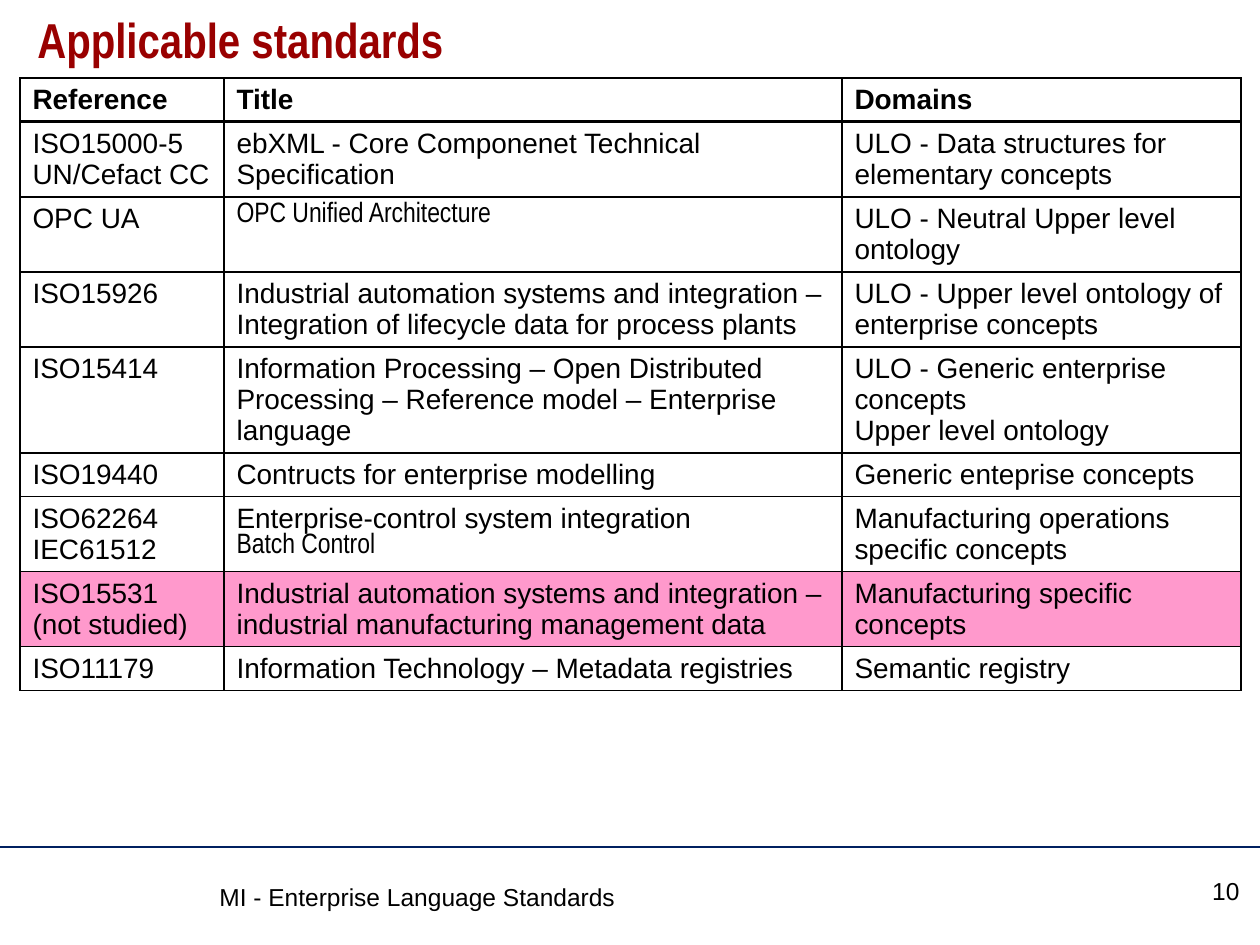
from lxml import etree
from pptx import Presentation
from pptx.dml.color import RGBColor
from pptx.enum.shapes import MSO_CONNECTOR
from pptx.enum.text import PP_ALIGN
from pptx.oxml.ns import qn
from pptx.util import Pt

STRAIGHT = MSO_CONNECTOR.STRAIGHT
LEFT, RIGHT = PP_ALIGN.LEFT, PP_ALIGN.RIGHT
EMU_PER_INCH, PX_PER_INCH = 914400, 126
THEME = {
    "text": "000000", "title": "990000", "rule": "002060", "highlight": "FF99CC",
    "font": "Arial", "narrow": "Arial Narrow",
    "title_size": 28, "table_size": 16, "footer_size": 14,
}
NARROW_SPACING = 0.9


def px(length):
    return round(length * EMU_PER_INCH / PX_PER_INCH)


def style_paragraph(paragraph, size, color="text", bold=False, narrow=False):
    if narrow:
        paragraph.line_spacing = NARROW_SPACING
    for run in paragraph.runs:
        run.font.name = THEME["narrow" if narrow else "font"]
        run.font.size = Pt(THEME[size])
        run.font.bold = bold
        run.font.color.rgb = RGBColor.from_string(THEME[color])


presentation = Presentation()
presentation.slide_width, presentation.slide_height = px(1260), px(945)
slide = presentation.slides.add_slide(presentation.slide_layouts[6])

# Footer rule
rule = slide.shapes.add_connector(STRAIGHT, 0, px(847), px(1260), px(847))
rule.line.color.rgb = RGBColor.from_string(THEME["rule"])
rule.line.width = Pt(0.75)
etree.SubElement(rule._element.spPr, qn("a:effectLst"))

# Standards table
rows = [
    ("Reference", "Title", "Domains"),
    ("ISO15000-5\nUN/Cefact CC", "ebXML - Core Componenet Technical Specification",
     "ULO - Data structures for elementary concepts"),
    ("OPC UA", "OPC Unified Architecture", "ULO - Neutral Upper level ontology"),
    ("ISO15926",
     "Industrial automation systems and integration – "
     "Integration of lifecycle data for process plants",
     "ULO - Upper level ontology of enterprise concepts"),
    ("ISO15414",
     "Information Processing – Open Distributed Processing – "
     "Reference model – Enterprise language",
     "ULO - Generic enterprise concepts\nUpper level ontology"),
    ("ISO19440", "Contructs for enterprise modelling", "Generic enteprise concepts"),
    ("ISO62264 IEC61512", "Enterprise-control system integration\nBatch Control",
     "Manufacturing operations specific concepts"),
    ("ISO15531\n(not studied)",
     "Industrial automation systems and integration – "
     "industrial manufacturing management data",
     "Manufacturing specific concepts"),
    ("ISO11179", "Information Technology – Metadata registries", "Semantic registry"),
]
column_widths = [204, 618, 399]
line_counts = [1, 2, 2, 2, 3, 1, 2, 2, 1]
row_heights = [13 + 31 * count for count in line_counts]
narrow_texts = {"OPC Unified Architecture", "Batch Control"}
highlighted_row = 7

frame = slide.shapes.add_table(len(rows), len(column_widths), px(20), px(78),
                               px(sum(column_widths)), px(sum(row_heights)))
table = frame.table
table.first_row = table.horz_banding = False
for column, width in zip(table.columns, column_widths):
    column.width = px(width)

for row_index, (texts, height) in enumerate(zip(rows, row_heights)):
    table.rows[row_index].height = px(height)
    for column_index, text in enumerate(texts):
        cell = table.cell(row_index, column_index)
        cell.text_frame.text = text
        for paragraph in cell.text_frame.paragraphs:
            style_paragraph(paragraph, "table_size", bold=row_index == 0,
                            narrow=paragraph.text in narrow_texts)
        properties = cell._tc.get_or_add_tcPr()
        for side in ("L", "R", "T", "B"):
            below_header = (row_index, side) in ((0, "B"), (1, "T"))
            border = etree.SubElement(properties, qn(f"a:ln{side}"),
                                      w=str(Pt(2 if below_header else 1)))
            solid = etree.SubElement(border, qn("a:solidFill"))
            etree.SubElement(solid, qn("a:srgbClr"), val=THEME["text"])
        if row_index == highlighted_row:
            cell.fill.solid()
            cell.fill.fore_color.rgb = RGBColor.from_string(THEME["highlight"])
        else:
            cell.fill.background()

# Title, footer and page number
labels = [
    ("Applicable standards", (25, 10, 1211, 105), LEFT,
     {"size": "title_size", "color": "title", "bold": True, "narrow": True}),
    ("MI - Enterprise Language Standards", (207, 876, 857, 50), LEFT,
     {"size": "footer_size"}),
    ("10", (1136, 870, 116, 57), RIGHT, {"size": "footer_size"}),
]
for text, box, alignment, style in labels:
    text_frame = slide.shapes.add_textbox(*map(px, box)).text_frame
    text_frame.word_wrap = True
    text_frame.text = text
    paragraph = text_frame.paragraphs[0]
    paragraph.alignment = alignment
    style_paragraph(paragraph, **style)

presentation.save("out.pptx")
